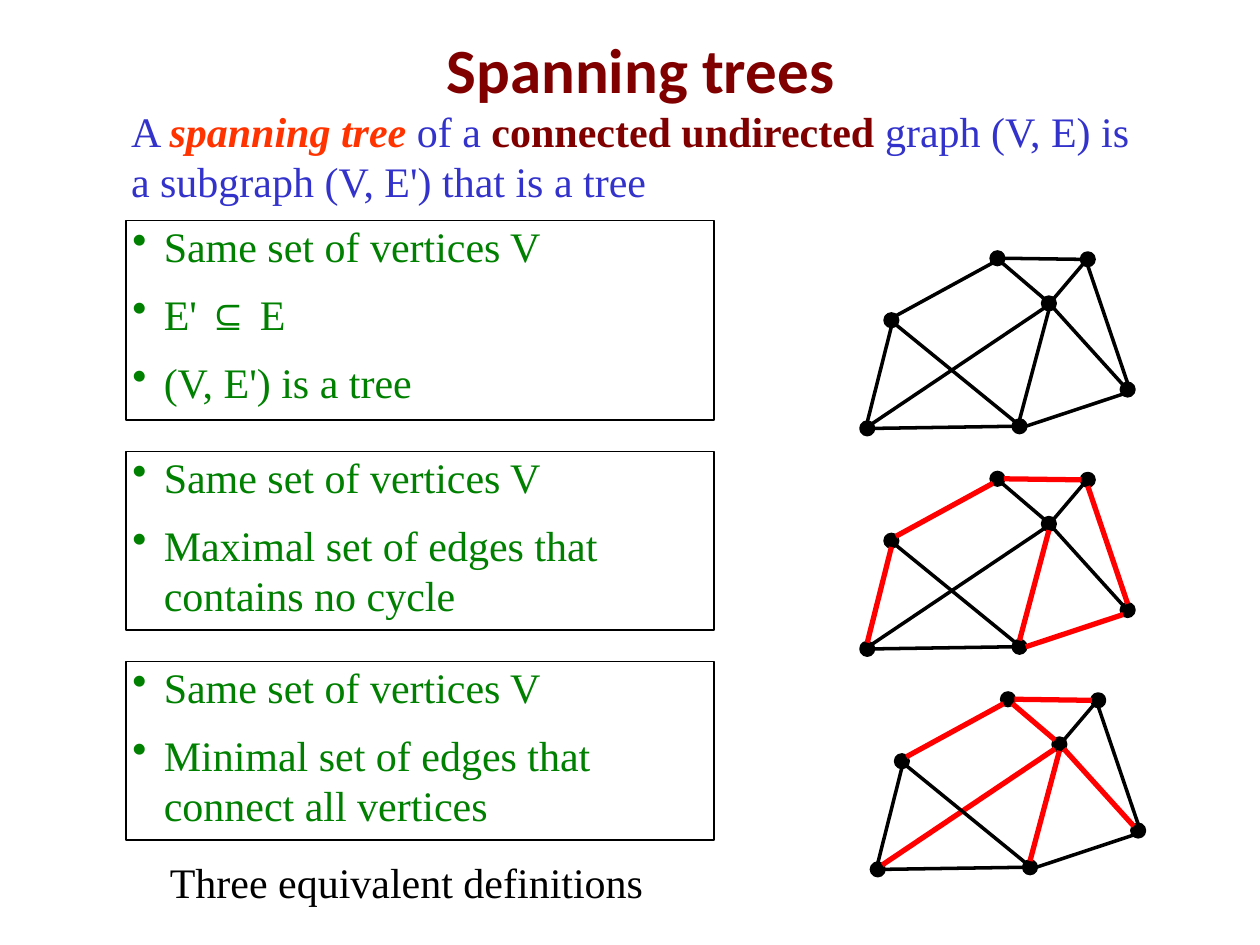
from dataclasses import dataclass
from math import cos, pi, sin
from typing import NamedTuple

from lxml import etree
from pptx import Presentation
from pptx import util as u
from pptx.dml.color import RGBColor
from pptx.enum import shapes, text
from pptx.oxml.ns import qn

CELL = 1 / 12  # grid step in inches: the slide is 120 columns by 90 rows


@dataclass(frozen=True)
class Theme:
    title_font: str = "Calibri"
    body_font: str = "Times New Roman"
    title_size: float = 36
    body_size: float = 24
    maroon: str = "800000"
    blue: str = "3333CC"
    orange: str = "FF3300"
    green: str = "008000"
    black: str = "000000"
    red: str = "FF0000"
    edge_width: float = 2
    tree_width: float = 3


T = Theme()


class Box(NamedTuple):
    col: float
    row: float
    cols: float
    rows: float


class Definition(NamedTuple):
    box: Box
    items: tuple[str, ...]


class Graph(NamedTuple):
    col: float
    row: float
    tree: frozenset[str]


class Edge(NamedTuple):
    start: str
    start_side: str
    end: str
    end_side: str


DEFINITIONS = (
    Definition(Box(12, 21, 56, 19), ("Same set of vertices V", "E' ⊆ E", "(V, E') is a tree")),
    Definition(Box(12, 43, 56, 17),
               ("Same set of vertices V", "Maximal set of edges that contains no cycle")),
    Definition(Box(12, 63, 56, 17),
               ("Same set of vertices V", "Minimal set of edges that connect all vertices")),
)

# Vertex dots: left and top in cells, from the graph's corner
DOT = 1.2
VERTICES = {"a": (2.3, 5.9), "b": (0, 16.2), "c": (14.5, 16), "d": (17.3, 4.3),
            "e": (24.8, 12.5), "f": (12.4, 0), "g": (21, 0.1)}
# Sides of a dot, clockwise from the right
SIDES = ("E", "SE", "S", "SW", "W", "NW", "N", "NE")
EDGES = (
    Edge("a", "S", "b", "N"), Edge("d", "S", "c", "N"), Edge("d", "NE", "g", "SW"),
    Edge("f", "SE", "d", "NW"), Edge("f", "SW", "a", "NE"), Edge("d", "SW", "b", "NE"),
    Edge("f", "E", "g", "W"), Edge("a", "SE", "c", "NW"), Edge("d", "SE", "e", "NW"),
    Edge("g", "S", "e", "N"), Edge("e", "SW", "c", "E"), Edge("b", "E", "c", "W"),
)
GRAPHS = (
    Graph(82, 24, frozenset()),
    Graph(82, 45, frozenset({"ab", "dc", "fa", "fg", "ge", "ec"})),
    Graph(83, 66, frozenset({"dc", "fd", "fa", "db", "fg", "de"})),
)


def cells(n: float) -> u.Emu:
    return u.Inches(n * CELL)


def place(box: Box) -> tuple[u.Emu, ...]:
    return tuple(cells(n) for n in box)


def rgb(color: str) -> RGBColor:
    return RGBColor.from_string(color)


def add_run(p, words: str, *, color: str, size: float = T.body_size, font: str = T.body_font,
            bold: bool = False, italic: bool = False) -> None:
    r = p.add_run()
    r.text = words
    f = r.font
    f.name, f.size, f.bold, f.italic = font, u.Pt(size), bold, italic
    f.color.rgb = rgb(color)


def set_frame(tf, left: float = 0, top: float = 0, right: float = 0.04, bottom: float = 0,
              anchor=text.MSO_ANCHOR.TOP) -> None:
    tf.word_wrap = True
    tf.auto_size = text.MSO_AUTO_SIZE.NONE
    tf.vertical_anchor = anchor
    tf.margin_left, tf.margin_top = u.Inches(left), u.Inches(top)
    tf.margin_right, tf.margin_bottom = u.Inches(right), u.Inches(bottom)


def add_bullet(p, color: str) -> None:
    pPr = p._p.get_or_add_pPr()
    pPr.set("marL", str(u.Inches(0.3)))
    pPr.set("indent", str(u.Inches(-0.25)))
    clr = etree.SubElement(pPr, qn("a:buClr"))
    etree.SubElement(clr, qn("a:srgbClr")).set("val", color)
    etree.SubElement(pPr, qn("a:buChar")).set("char", "•")


def draw_definition(sl, definition: Definition) -> None:
    sp = sl.shapes.add_shape(shapes.MSO_SHAPE.RECTANGLE, *place(definition.box))
    sp.shadow.inherit = False
    sp.fill.background()
    sp.line.color.rgb = rgb(T.black)
    sp.line.width = u.Pt(1)
    tf = sp.text_frame
    set_frame(tf)
    for i, item in enumerate(definition.items):
        p = tf.add_paragraph() if i else tf.paragraphs[0]
        p.alignment = text.PP_ALIGN.LEFT
        p.space_before = u.Pt(10 if i else 16)
        add_bullet(p, T.green)
        add_run(p, item, color=T.green)


def side_point(graph: Graph, vertex: str, side: str) -> tuple[u.Emu, u.Emu]:
    angle = SIDES.index(side) * pi / 4
    x, y = VERTICES[vertex]
    radius = DOT / 2
    return (cells(graph.col + x + radius * (1 + cos(angle))),
            cells(graph.row + y + radius * (1 + sin(angle))))


def draw_graph(sl, graph: Graph) -> None:
    group = sl.shapes.add_group_shape().shapes
    for x, y in VERTICES.values():
        dot = group.add_shape(shapes.MSO_SHAPE.OVAL,
                              *place(Box(graph.col + x, graph.row + y, DOT, DOT)))
        dot.shadow.inherit = False
        dot.fill.solid()
        dot.fill.fore_color.rgb = rgb(T.black)
        dot.line.color.rgb = rgb(T.black)
        dot.line.width = u.Pt(T.edge_width)
    for edge in EDGES:
        in_tree = edge.start + edge.end in graph.tree
        line = group.add_connector(shapes.MSO_CONNECTOR.STRAIGHT,
                                   *side_point(graph, edge.start, edge.start_side),
                                   *side_point(graph, edge.end, edge.end_side))
        line.line.color.rgb = rgb(T.red if in_tree else T.black)
        line.line.width = u.Pt(T.tree_width if in_tree else T.edge_width)
        etree.SubElement(line._element.spPr, qn("a:effectLst"))


def main() -> None:
    prs = Presentation()
    prs.slide_width, prs.slide_height = cells(120), cells(90)
    sl = prs.slides.add_slide(prs.slide_layouts[5])

    # Title
    title = sl.shapes.title
    title.left, title.top, title.width, title.height = place(Box(8, 3, 107, 7))
    set_frame(title.text_frame, 0.06, 0.06, 0.14, 0.06, text.MSO_ANCHOR.MIDDLE)
    p = title.text_frame.paragraphs[0]
    p.alignment = text.PP_ALIGN.CENTER
    add_run(p, "Spanning trees", color=T.maroon, size=T.title_size, font=T.title_font, bold=True)

    # Opening sentence
    tf = sl.shapes.add_textbox(*place(Box(12, 10, 97.5, 11.9))).text_frame
    set_frame(tf, left=0.04)
    p = tf.paragraphs[0]
    add_run(p, "A ", color=T.blue)
    add_run(p, "spanning tree ", color=T.orange, bold=True, italic=True)
    add_run(p, "of a ", color=T.blue)
    add_run(p, "connected undirected ", color=T.maroon, bold=True)
    add_run(p, "graph (V, E) is a subgraph (V, E') that is a tree", color=T.blue)

    # Definitions and their graphs
    for definition in DEFINITIONS:
        draw_definition(sl, definition)
    for graph in GRAPHS:
        draw_graph(sl, graph)

    # Closing remark
    tf = sl.shapes.add_textbox(*place(Box(15, 81, 47.8, 6.1))).text_frame
    tf.word_wrap = False
    tf.auto_size = text.MSO_AUTO_SIZE.SHAPE_TO_FIT_TEXT
    add_run(tf.paragraphs[0], "Three equivalent definitions", color=T.black)

    prs.save("out.pptx")


if __name__ == "__main__":
    main()
